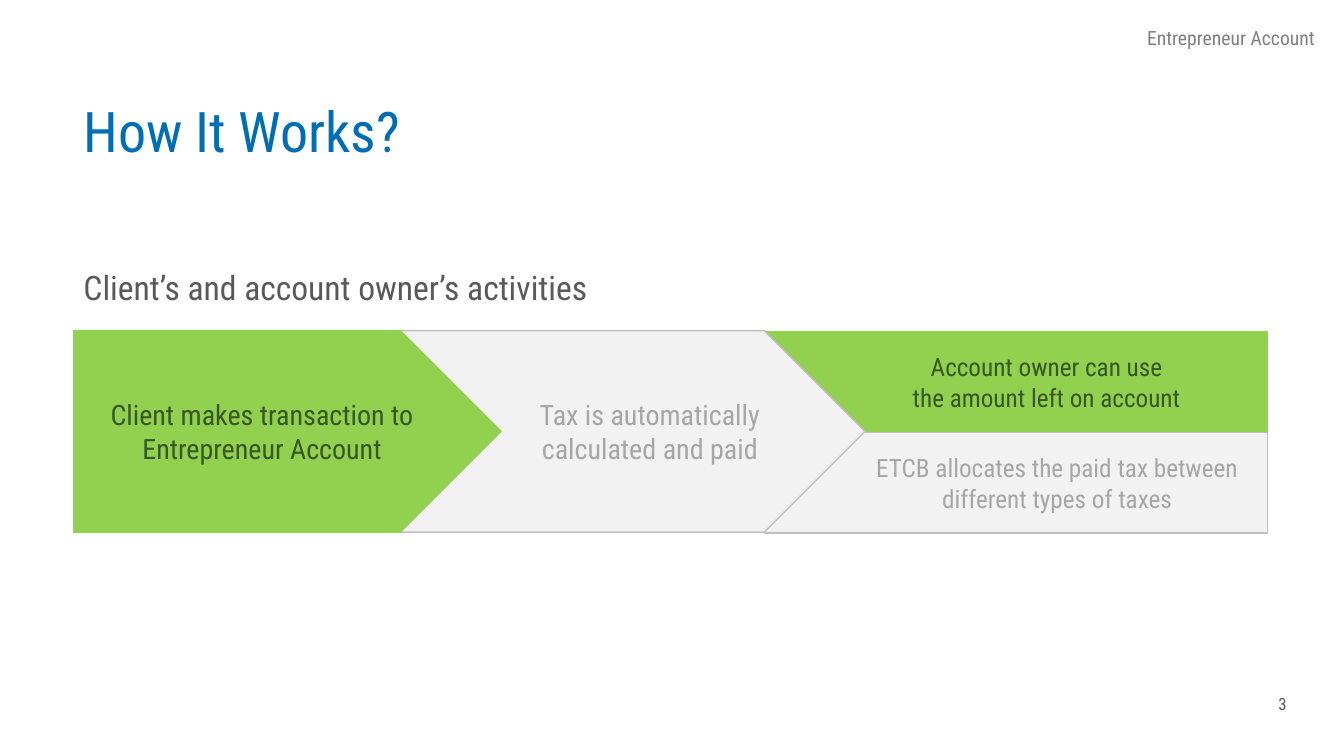
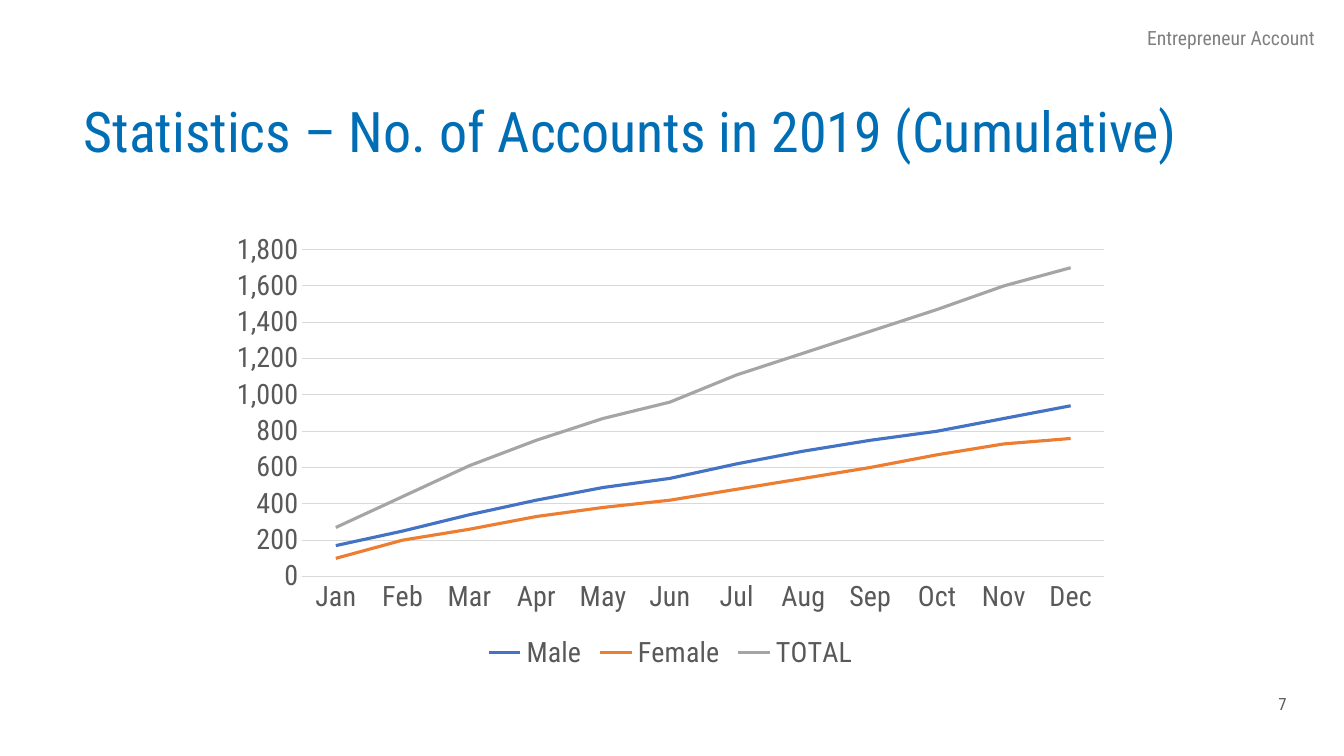
from pptx import Presentation
from pptx.chart.data import CategoryChartData
from pptx.dml.color import RGBColor
from pptx.enum.chart import XL_CHART_TYPE as ChartType
from pptx.enum.chart import XL_LEGEND_POSITION as LegendPosition
from pptx.enum.chart import XL_TICK_MARK as TickMark
from pptx.enum.shapes import MSO_SHAPE as Shape
from pptx.enum.text import MSO_ANCHOR as Anchor
from pptx.enum.text import PP_ALIGN as Align
from pptx.util import Inches, Pt

# Shared style
FONT = "Roboto Condensed"
BLUE = RGBColor(0x00, 0x6E, 0xB5)
TEXT_GRAY = RGBColor(0x59, 0x59, 0x59)
HEADER_GRAY = RGBColor(0x80, 0x80, 0x80)
GRID_GRAY = RGBColor(0xD9, 0xD9, 0xD9)
GREEN = RGBColor(0x92, 0xD0, 0x50)
DARK_GREEN = RGBColor(0x38, 0x57, 0x23)
PALE_GRAY = RGBColor(0xF2, 0xF2, 0xF2)
BORDER_GRAY = RGBColor(0xBF, 0xBF, 0xBF)
MUTED_GRAY = RGBColor(0xA6, 0xA6, 0xA6)

# Fill, border and text colour of a step
ACTIVE = (GREEN, GREEN, DARK_GREEN)
AUTOMATIC = (PALE_GRAY, BORDER_GRAY, MUTED_GRAY)

LEFT, CONTENT_WIDTH = 0.73, 11.84

MONTHS = ["Jan", "Feb", "Mar", "Apr", "May", "Jun",
          "Jul", "Aug", "Sep", "Oct", "Nov", "Dec"]
ACCOUNTS = [
    ("Male", RGBColor(0x44, 0x72, 0xC4),
     [170, 250, 340, 420, 490, 540, 620, 690, 750, 800, 870, 940]),
    ("Female", RGBColor(0xED, 0x7D, 0x31),
     [100, 200, 260, 330, 380, 420, 480, 540, 600, 670, 730, 760]),
    ("TOTAL", RGBColor(0xA5, 0xA5, 0xA5),
     [270, 440, 610, 750, 870, 960, 1110, 1230, 1350, 1470, 1600, 1700]),
]


def style_font(font, size, color):
    font.name = FONT
    font.size = Pt(size)
    font.color.rgb = color


def write(frame, text, size, color, align=Align.LEFT, spacing=1.0):
    """Fill a frame with one paragraph; a newline becomes a line break."""
    frame.word_wrap = True
    para = frame.paragraphs[0]
    para.alignment = align
    para.line_spacing = spacing
    for index, line in enumerate(text.split("\n")):
        if index:
            para.add_line_break()
        span = para.add_run()
        span.text = line
        style_font(span.font, size, color)


def add_text(page, place, text, size, color, **layout):
    box = page.shapes.add_textbox(*map(Inches, place))
    write(box.text_frame, text, size, color, **layout)


def add_step(page, kind, place, text, size, style, insets=(0.1, 0.1)):
    fill, border, color = style
    step = page.shapes.add_shape(kind, *map(Inches, place))
    step.shadow.inherit = False
    step.fill.solid()
    step.fill.fore_color.rgb = fill
    step.line.color.rgb = border
    step.line.width = Pt(1)
    frame = step.text_frame
    frame.vertical_anchor = Anchor.MIDDLE
    frame.margin_left, frame.margin_right = map(Inches, insets)
    write(frame, text, size, color, align=Align.CENTER)


def add_page(deck, title, number):
    """Add a page with the title, running header and page number."""
    page = deck.slides.add_slide(deck.slide_layouts[6])
    add_text(page, (LEFT, 0.98, CONTENT_WIDTH, 1.31), title, 40, BLUE,
             spacing=0.9)
    add_text(page, (12.58, 6.83, 0.75, 0.35), str(number), 12, TEXT_GRAY)
    add_text(page, (10.46, 0.23, 2.68, 0.36), "Entrepreneur Account", 14,
             HEADER_GRAY, align=Align.RIGHT, spacing=0.9)
    return page


def add_line_chart(page, place, categories, series_list):
    data = CategoryChartData(number_format="#,##0")
    data.categories = categories
    for name, _, values in series_list:
        data.add_series(name, values)
    chart = page.shapes.add_chart(
        ChartType.LINE, *map(Inches, place), data).chart
    style_font(chart.font, 20, TEXT_GRAY)
    chart.has_title = False
    chart.has_legend = True
    chart.legend.position = LegendPosition.BOTTOM
    chart.legend.include_in_layout = False
    style_font(chart.legend.font, 20, TEXT_GRAY)

    # Axes and grid
    months, counts = chart.category_axis, chart.value_axis
    for axis in (months, counts):
        axis.major_tick_mark = axis.minor_tick_mark = TickMark.NONE
        style_font(axis.tick_labels.font, 20, TEXT_GRAY)
    counts.minimum_scale, counts.maximum_scale = 0, 1800
    counts.major_unit = 200
    counts.tick_labels.number_format = "#,##0"
    counts.tick_labels.number_format_is_linked = False
    counts.has_major_gridlines = True
    counts.format.line.fill.background()
    for line in (months.format.line, counts.major_gridlines.format.line):
        line.color.rgb = GRID_GRAY
        line.width = Pt(0.75)

    # Series
    plot = chart.plots[0]
    plot.vary_by_categories = False
    for series, (_, color, _) in zip(plot.series, series_list):
        series.smooth = False
        series.format.line.color.rgb = color
        series.format.line.width = Pt(2.25)


def build_process_page(deck):
    page = add_page(deck, "How It Works?", 3)
    add_text(page, (LEFT, 2.64, CONTENT_WIDTH, 0.65),
             "Client’s and account owner’s activities", 24, TEXT_GRAY,
             spacing=0.9)

    # Outcomes first, so that the arrows overlap them
    top, half = 3.28, 1
    outcome_left, outcome_width = 7.58, 4.99
    outcomes = [
        ("Account owner can use\nthe amount left on account",
         ACTIVE, (0.71, 0.1)),
        ("ETCB allocates the paid tax between different types of taxes",
         AUTOMATIC, (1.1, 0.28)),
    ]
    for row, (text, style, insets) in enumerate(outcomes):
        place = (outcome_left, top + 0.01 + row * half, outcome_width, half)
        add_step(page, Shape.RECTANGLE, place, text, 18, style, insets)

    # Arrows from right to left, each covering the next one's tail
    add_step(page, Shape.PENTAGON, (3.97, top, 4.61, 2 * half),
             "Tax is automatically calculated and paid", 20, AUTOMATIC,
             (0.94, 0.1))
    add_step(page, Shape.PENTAGON, (LEFT, top, 4.24, 2 * half),
             "Client makes transaction to Entrepreneur Account", 20, ACTIVE)


def build_statistics_page(deck):
    page = add_page(
        deck, "Statistics – No. of Accounts in 2019 (Cumulative)", 7)
    add_line_chart(page, (2.17, 2.22, 8.96, 4.48), MONTHS, ACCOUNTS)


def main():
    deck = Presentation()
    deck.slide_width, deck.slide_height = Inches(13.33), Inches(7.5)
    build_process_page(deck)
    build_statistics_page(deck)
    deck.save("out.pptx")


if __name__ == "__main__":
    main()
